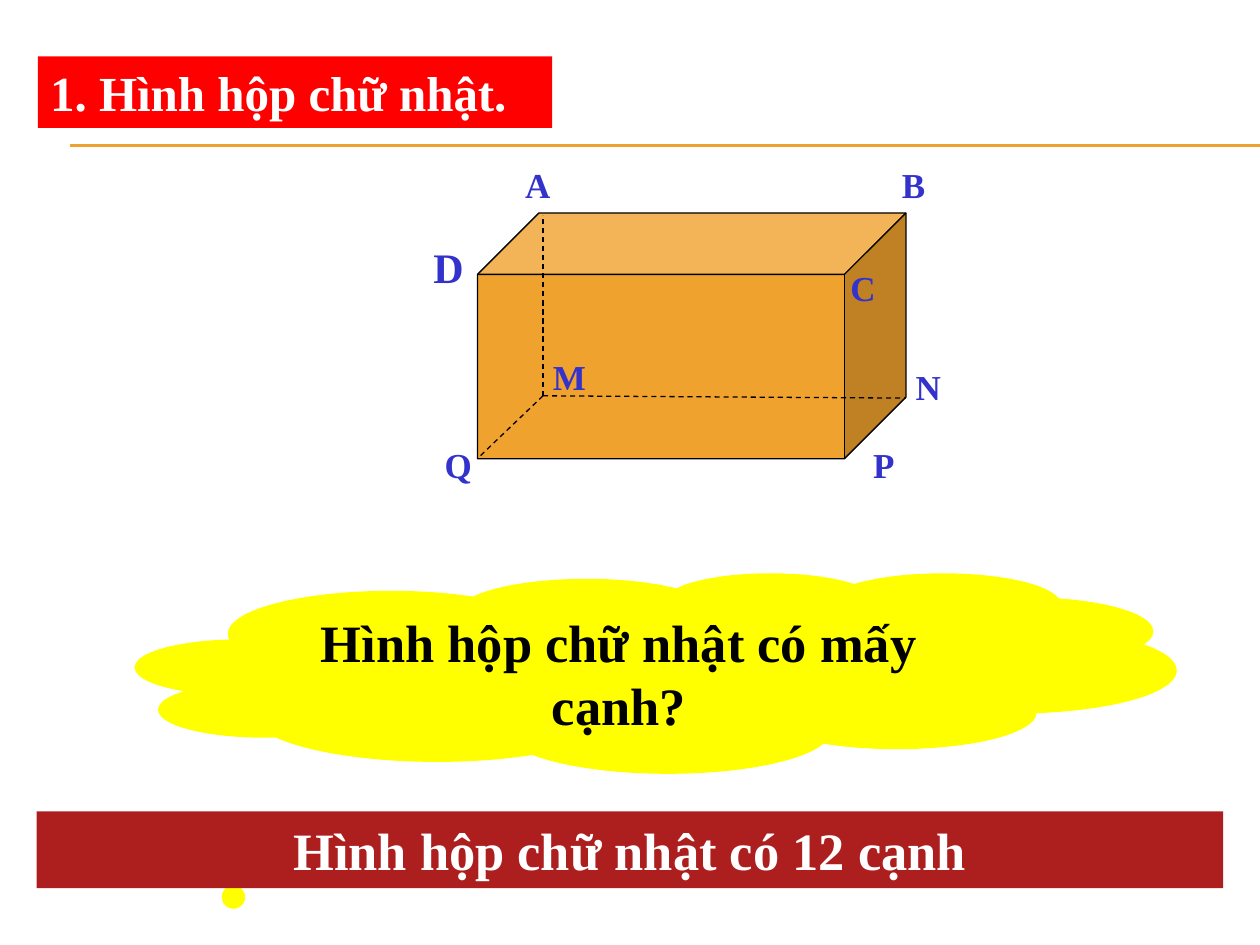
from pptx import Presentation
from pptx.dml.color import RGBColor
from pptx.enum.dml import MSO_LINE
from pptx.enum.shapes import MSO_CONNECTOR, MSO_SHAPE as Shape
from pptx.enum.text import MSO_ANCHOR, MSO_AUTO_SIZE as AutoSize, PP_ALIGN as Align
from pptx.oxml.ns import qn
from pptx.util import Pt
from lxml.etree import SubElement

ORANGE = RGBColor(0xF0, 0xA2, 0x2E)
YELLOW = RGBColor(0xFF, 0xFF, 0x00)
CRIMSON = RGBColor(0xAD, 0x1F, 0x1F)
RED = RGBColor(0xFF, 0x00, 0x00)
BLUE = RGBColor(0x33, 0x33, 0xCC)
BLACK = RGBColor(0x00, 0x00, 0x00)
WHITE = RGBColor(0xFF, 0xFF, 0xFF)

FONT = "Times New Roman"
RULE_LEFT, SLIDE_WIDTH, SLIDE_HEIGHT = 40.3, 720, 540
LABEL_WIDTH = 46

VERTEX_LABELS = [
    ("A", 293, 90, 20), ("B", 508.3, 90, 20),
    ("C", 478.8, 149, 20), ("D", 240.5, 134.6, 24),
    ("M", 308.9, 199.4, 20), ("N", 516.2, 205.2, 20),
    ("P", 491.8, 249.8, 20), ("Q", 247, 249.8, 20),
]
VERTEX_M = (310.3, 226.2)
HIDDEN_EDGE_ENDS = [(310.3, 123), (517.7, 227.5), (272.9, 262)]


def write_text(holder, text, size=20, color=BLACK, align=Align.LEFT, fit=True):
    frame = holder.text_frame
    frame.word_wrap = True
    frame.vertical_anchor = MSO_ANCHOR.TOP
    frame.auto_size = AutoSize.SHAPE_TO_FIT_TEXT if fit else AutoSize.NONE
    paragraph = frame.paragraphs[0]
    paragraph.text = text
    paragraph.alignment = align
    font = paragraph.runs[0].font
    font.name, font.size, font.bold = FONT, Pt(size), True
    font.color.rgb = color


def add_solid(shapes, kind, box, fill, outline=None):
    solid = shapes.add_shape(kind, *map(Pt, box))
    solid.shadow.inherit = False
    solid.fill.solid()
    solid.fill.fore_color.rgb = fill
    if outline is None:
        solid.line.fill.background()
    else:
        solid.line.color.rgb = outline
        solid.line.width = Pt(0.75)
    return solid


def add_edge(shapes, start, end, color, dash=None):
    edge = shapes.add_connector(MSO_CONNECTOR.STRAIGHT, *map(Pt, start + end))
    edge.line.color.rgb = color
    edge.line.width = Pt(0.75)
    if dash:
        edge.line.dash_style = dash
    SubElement(edge._element.spPr, qn("a:effectLst"))


def add_label(shapes, letter, left, top, size):
    height = 40 if size > 20 else 35
    label = shapes.add_textbox(Pt(left), Pt(top), Pt(LABEL_WIDTH), Pt(height))
    write_text(label, letter, size=size, color=BLUE)


def add_cuboid(shapes):
    cuboid = add_solid(shapes, Shape.CUBE, (272.9, 121.7, 244.8, 140.4), ORANGE, BLACK)
    cuboid.adjustments[0] = 0.25
    for end in HIDDEN_EDGE_ENDS:
        add_edge(shapes, VERTEX_M, end, BLACK, MSO_LINE.DASH)
    for vertex in VERTEX_LABELS:
        add_label(shapes, *vertex)


def main():
    deck = Presentation()
    deck.slide_width, deck.slide_height = Pt(SLIDE_WIDTH), Pt(SLIDE_HEIGHT)
    shapes = deck.slides.add_slide(deck.slide_layouts[6]).shapes

    for height in (82.8, 83.4):
        add_edge(shapes, (RULE_LEFT, height), (SLIDE_WIDTH, height), ORANGE)

    question = add_solid(shapes, Shape.CLOUD_CALLOUT, (77.8, 327.6, 594, 113.8), YELLOW, YELLOW)
    question.adjustments[0] = -0.52
    question.adjustments[1] = 1.44
    write_text(question, "Hình hộp chữ nhật có mấy cạnh?", size=30, align=Align.CENTER, fit=False)

    answer = add_solid(shapes, Shape.RECTANGLE, (21, 463.7, 678, 43.8), CRIMSON)
    write_text(answer, "Hình hộp chữ nhật có 12 cạnh", size=30, color=WHITE, align=Align.CENTER)

    heading = add_solid(shapes, Shape.RECTANGLE, (21.6, 32.2, 294, 41), RED)
    write_text(heading, "1. Hình hộp chữ nhật.", size=28, color=WHITE)

    add_cuboid(shapes.add_group_shape().shapes)
    deck.save("out.pptx")


if __name__ == "__main__":
    main()
